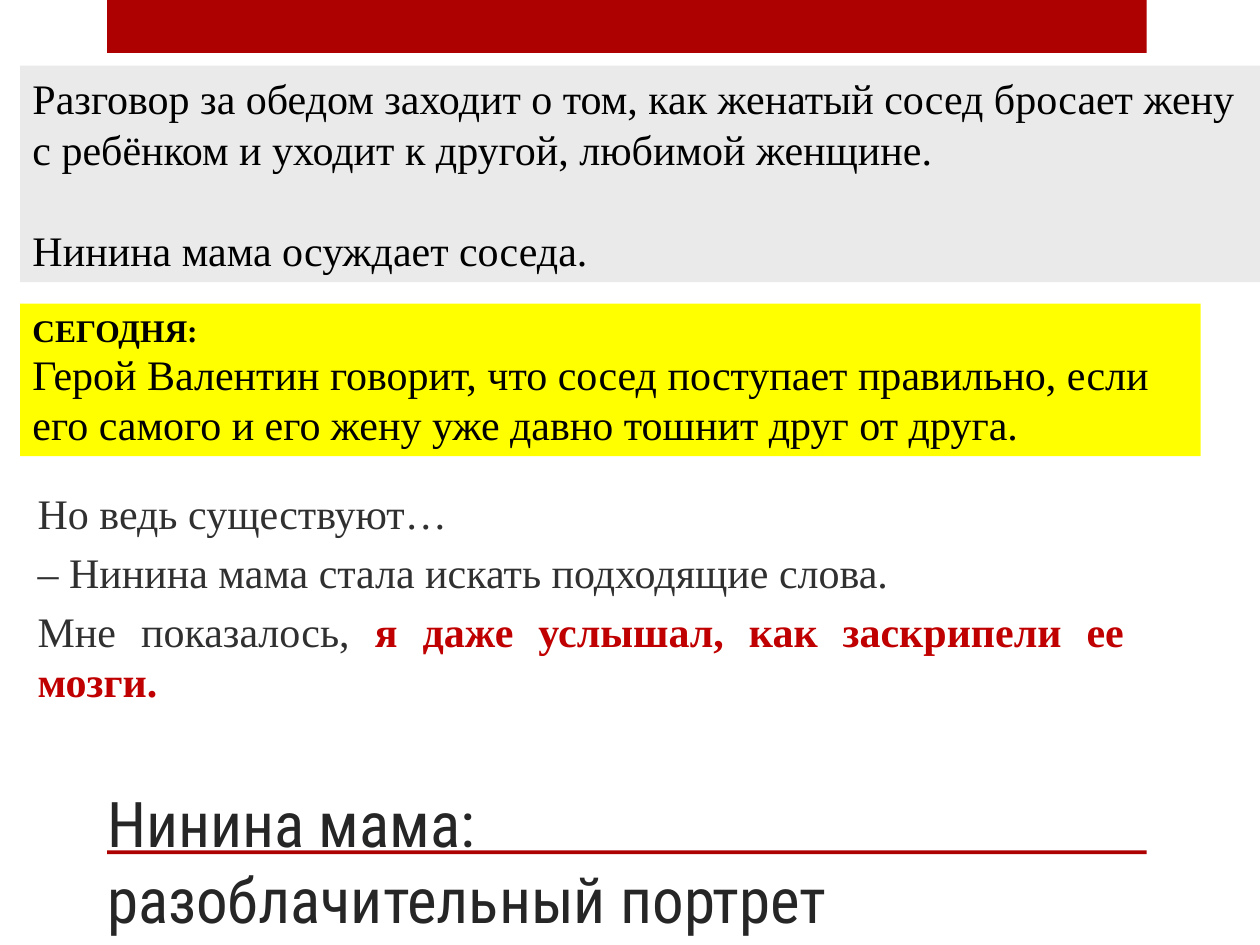
from pptx import Presentation
from pptx.dml.color import RGBColor
from pptx.enum.shapes import MSO_SHAPE
from pptx.enum.text import MSO_ANCHOR, PP_ALIGN
from pptx.util import Inches, Pt

COLORS = {
    "red": "AD0101",
    "accent": "C00000",
    "title": "262626",
    "body": "303030",
    "black": "000000",
    "grey": "EAEAEA",
    "yellow": "FFFF00",
}


class Deck:
    head = "Roboto Condensed"
    font = "Times New Roman"

    def __init__(self):
        self.prs = Presentation()
        self.prs.slide_width, self.prs.slide_height = Inches(10), Inches(7.5)
        self.slide = self.prs.slides.add_slide(self.prs.slide_layouts[5])

    def color(self, name):
        return RGBColor.from_string(COLORS[name])

    def run(self, para, text, size=24, color="black", bold=False, font=None):
        run = para.add_run()
        run.text = text
        run.font.name = font or self.font
        run.font.size = Pt(size)
        run.font.bold = bold
        run.font.color.rgb = self.color(color)

    def fill(self, frame, paras, align=PP_ALIGN.LEFT):
        """Each paragraph is (space before, [(text, run style), ...])."""
        frame.word_wrap = True
        frame.vertical_anchor = MSO_ANCHOR.MIDDLE
        for i, (gap, runs) in enumerate(paras):
            para = frame.add_paragraph() if i else frame.paragraphs[0]
            para.alignment = align
            para.space_before = Pt(gap)
            for text, style in runs:
                self.run(para, text, **style)

    def bar(self, box, color):
        shape = self.slide.shapes.add_shape(
            MSO_SHAPE.RECTANGLE, *map(Inches, box))
        shape.shadow.inherit = False
        shape.fill.solid()
        shape.fill.fore_color.rgb = self.color(color)
        shape.line.fill.background()
        return shape

    def panel(self, box, color, paras):
        self.fill(self.bar(box, color).text_frame, paras)

    def text(self, box, paras, align):
        shape = self.slide.shapes.add_textbox(*map(Inches, box))
        self.fill(shape.text_frame, paras, align)

    def title(self, box, lines):
        shape = self.slide.shapes.title
        shape.left, shape.top, shape.width, shape.height = map(Inches, box)
        frame = shape.text_frame
        frame.word_wrap = True
        frame.vertical_anchor = MSO_ANCHOR.BOTTOM
        para = frame.paragraphs[0]
        para.alignment = PP_ALIGN.LEFT
        for i, line in enumerate(lines):
            if i:
                para.add_line_break()
            self.run(para, line, 36, "title", font=self.head)


def main():
    deck = Deck()

    # Red band and rule
    for top, height in ((0, 0.42), (6.75, 0.03)):
        deck.bar((0.85, top, 8.25, height), "red")

    # Title
    deck.title((0.75, 5.73, 8.66, 1.75),
               ["Нинина мама:", "разоблачительный портрет"])

    # Quotation
    body = {"color": "body"}
    deck.text((0.2, 3.83, 8.82, 1.81), [
        (4.8, [("Но ведь существуют…", body)]),
        (4.8, [("– Нинина мама стала искать подходящие слова.", body)]),
        (4.8, [("Мне показалось, ", body),
               ("я даже услышал, как заскрипели ее мозги.",
                {"color": "accent", "bold": True})]),
    ], PP_ALIGN.JUSTIFY)

    # Story panel
    deck.panel((0.16, 0.52, 9.84, 1.72), "grey", [
        (0, [("Разговор за обедом заходит о том, как женатый сосед "
              "бросает жену", {})]),
        (0, [("с ребёнком и уходит к другой, любимой женщине.", {})]),
        (29, [("Нинина мама осуждает соседа.", {})]),
    ])

    # Present-day panel
    deck.panel((0.16, 2.41, 9.37, 1.21), "yellow", [
        (0, [("СЕГОДНЯ:", {"size": 18, "bold": True})]),
        (0, [("Герой Валентин говорит, что сосед поступает правильно, если "
              "его самого и его жену уже давно тошнит друг от друга.", {})]),
    ])

    deck.prs.save("out.pptx")


if __name__ == "__main__":
    main()
